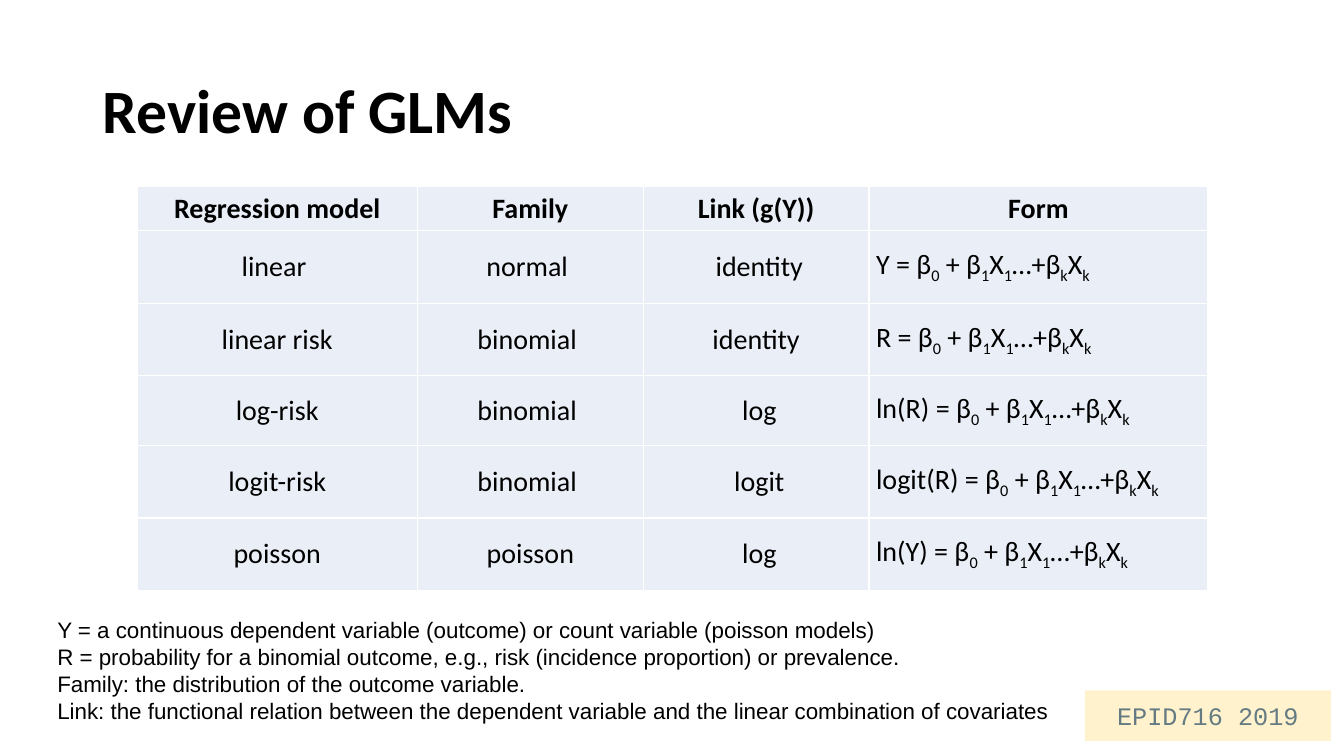
import lxml.etree
import pptx
import pptx.dml.color
import pptx.enum.shapes
import pptx.enum.text
import pptx.oxml
import pptx.oxml.ns
import pptx.util

Inches = pptx.util.Inches
Pt = pptx.util.Pt
RGB = pptx.dml.color.RGBColor.from_string
ALIGN = pptx.enum.text.PP_ALIGN
MIDDLE = pptx.enum.text.MSO_ANCHOR.MIDDLE
qn = pptx.oxml.ns.qn

THEME = {
    "title": {"name": "Calibri", "size": Pt(44), "bold": True, "color": "000000"},
    "head": {"name": "Calibri", "size": Pt(20), "bold": True, "color": "000000"},
    "body": {"name": "Calibri", "size": Pt(20), "bold": False, "color": "000000"},
    "notes": {"name": "Arial", "size": Pt(16), "bold": False, "color": "000000"},
    "tag": {"name": "Courier New", "size": Pt(18), "bold": False, "color": "657B83"},
    "cell_fill": "EAEFF7",
    "border": "FFFFFF",
    "tag_fill": "FFF2CC",
}


def add_run(p, text, style):
    r = p.add_run()
    r.text = text
    for key, value in THEME[style].items():
        if key == "color":
            r.font.color.rgb = RGB(value)
        else:
            setattr(r.font, key, value)
    return r


def add_borders(cell):
    tcPr = cell._tc.get_or_add_tcPr()
    for i, side in enumerate(("lnL", "lnR", "lnT", "lnB")):
        ln = pptx.oxml.parse_xml(
            f'<a:{side} {pptx.oxml.ns.nsdecls("a")} w="{Pt(1)}"><a:solidFill>'
            f'<a:srgbClr val="{THEME["border"]}"/></a:solidFill></a:{side}>')
        tcPr.insert(i, ln)


prs = pptx.Presentation()
prs.slide_width, prs.slide_height = Inches(13.33), Inches(7.5)
s = prs.slides.add_slide(prs.slide_layouts[5])

# Title
title = s.shapes.title
title.left, title.top = Inches(0.92), Inches(0.4)
title.width, title.height = Inches(11.5), Inches(1.45)
tf = title.text_frame
tf.vertical_anchor = MIDDLE
p = tf.paragraphs[0]
p.alignment = ALIGN.LEFT
p.line_spacing = 0.9
add_run(p, "Review of GLMs", "title")

# Table of models: the last column holds the left side of each equation
header = ["Regression model", "Family", "Link (g(Y))", "Form"]
models = [
    ["linear ", "normal ", " identity", "Y"],
    ["linear risk", "binomial ", "identity", "R"],
    ["log-risk", "binomial\u00a0", " log", "ln(R)"],
    ["logit-risk", "binomial\u00a0", " logit", "logit(R)"],
    ["poisson", "poisson", " log", "ln(Y)"],
]
# Base text and subscripts alternate
predictor = ["0", " + β", "1", "X", "1", "…+β", "k", "X", "k"]
col_widths = [2.78, 2.24, 2.24, 3.36]
row_heights = [0.44, 0.72, 0.72, 0.69, 0.72, 0.72]

table = s.shapes.add_table(len(row_heights), len(col_widths), Inches(1.36), Inches(1.85),
                           Inches(10.62), Inches(4.01)).table
table.first_row = table.horz_banding = False
for col, width in zip(table.columns, col_widths):
    col.width = Inches(width)
for row, height in zip(table.rows, row_heights):
    row.height = Inches(height)

cell_format = {
    "vertical_anchor": MIDDLE,
    "margin_left": Inches(0.07), "margin_right": Inches(0.07),
    "margin_top": 0, "margin_bottom": 0,
}
for i, values in enumerate([header] + models):
    for j, value in enumerate(values):
        cell = table.cell(i, j)
        for key, setting in cell_format.items():
            setattr(cell, key, setting)
        cell.fill.solid()
        cell.fill.fore_color.rgb = RGB(THEME["cell_fill"])
        add_borders(cell)
        p = cell.text_frame.paragraphs[0]
        if i > 0 and j == 3:
            p.alignment = ALIGN.LEFT
            for n, part in enumerate([f"{value} = β"] + predictor):
                r = add_run(p, part, "body")
                if n % 2:
                    r.font._element.set("baseline", "-25000")
        else:
            p.alignment = ALIGN.CENTER
            add_run(p, value, "body" if i else "head")

# Definitions below the table
notes = [
    "Y = a continuous dependent variable (outcome) or count variable (poisson models)",
    "R = probability for a binomial outcome, e.g., risk (incidence proportion) or prevalence.",
    "Family: the distribution of the outcome variable.",
    "Link: the functional relation between the dependent variable and the linear combination of covariates",
]
tf = s.shapes.add_textbox(Inches(0.47), Inches(6.06), Inches(10.5), Inches(1.18)).text_frame
tf.word_wrap = True
tf.vertical_anchor = MIDDLE
for i, note in enumerate(notes):
    p = tf.add_paragraph() if i else tf.paragraphs[0]
    add_run(p, note, "notes")

# Course tag
sp = s.shapes.add_shape(pptx.enum.shapes.MSO_SHAPE.RECTANGLE, Inches(10.76), Inches(6.85),
                        Inches(2.44), Inches(0.5))
sp.shadow.inherit = False
sp.fill.solid()
sp.fill.fore_color.rgb = RGB(THEME["tag_fill"])
sp.line.fill.background()
tf = sp.text_frame
tf.vertical_anchor = MIDDLE
for side in ("left", "right", "top", "bottom"):
    setattr(tf, f"margin_{side}", Inches(0.1))
p = tf.paragraphs[0]
p.alignment = ALIGN.CENTER
add_run(p, "EPID716 2019", "tag")

prs.save("out.pptx")
